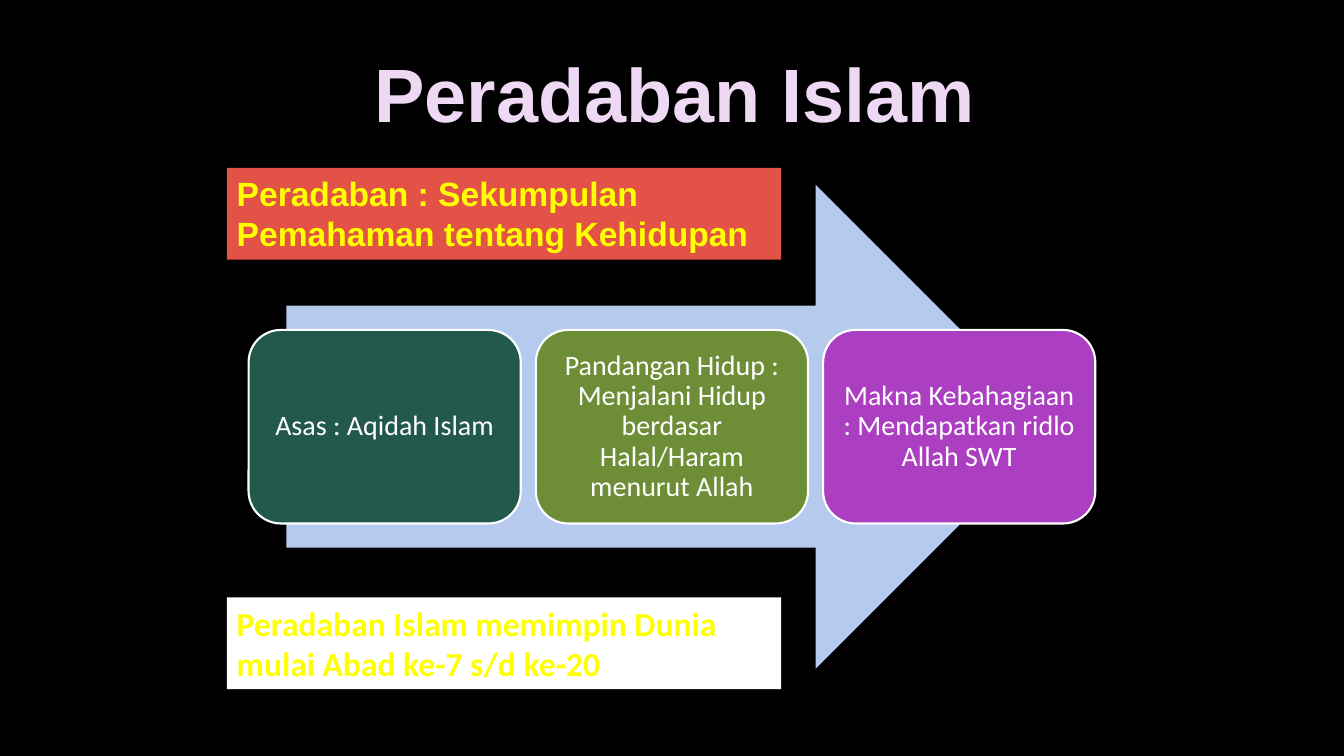
from dataclasses import dataclass

from pptx import Presentation
from pptx.dml.color import RGBColor
from pptx.enum.shapes import MSO_SHAPE
from pptx.enum.text import MSO_ANCHOR, PP_ALIGN
from pptx.util import Pt


@dataclass(frozen=True)
class Theme:
    background: str = "000000"
    title: str = "EED8F3"
    arrow: str = "B5CAED"
    light: str = "FFFFFF"
    accent: str = "FFFF00"
    red: str = "E25247"
    steps: tuple = ("23594C", "6D8E37", "AC3EC1")
    heading_font: str = "Arial"
    body_font: str = "Calibri"
    title_size: int = 54
    banner_size: int = 24
    step_size: int = 20


THEME = Theme()
STEPS = (
    "Asas : Aqidah Islam",
    "Pandangan Hidup : Menjalani Hidup berdasar Halal/Haram menurut Allah",
    "Makna Kebahagiaan : Mendapatkan ridlo Allah SWT",
)


def apply(obj, values):
    for name, value in values.items():
        setattr(obj, name, value)


def write(sp, text, color, font, frame, para):
    tf = sp.text_frame
    apply(tf, frame)
    p = tf.paragraphs[0]
    apply(p, para)
    r = p.add_run()
    r.text = text
    apply(r.font, font)
    r.font.color.rgb = RGBColor.from_string(color)


def add_block(s, kind, box, fill, line=None):
    sp = s.shapes.add_shape(kind, *(Pt(v) for v in box))
    sp.shadow.inherit = False
    sp.fill.solid()
    sp.fill.fore_color.rgb = RGBColor.from_string(fill)
    if line:
        sp.line.color.rgb = RGBColor.from_string(line)
        sp.line.width = Pt(1.5)
    else:
        sp.line.fill.background()
    return sp


def add_title(s, box, text):
    sp = s.shapes.title
    apply(sp, dict(zip(("left", "top", "width", "height"), map(Pt, box))))
    write(sp, text, THEME.title,
          {"name": THEME.heading_font, "size": Pt(THEME.title_size), "bold": True},
          {"word_wrap": False, "vertical_anchor": MSO_ANCHOR.TOP},
          {"alignment": PP_ALIGN.CENTER, "line_spacing": 1.0, "space_before": Pt(0)})


def add_process(s, box):
    left, top, width, height = box

    # Arrow behind the steps
    arrow_w = width * 0.85
    add_block(s, MSO_SHAPE.RIGHT_ARROW,
              (left + (width - arrow_w) / 2, top, arrow_w, height), THEME.arrow)

    # Equal steps, centred on the arrow
    step_w, step_h, gap = width * 0.3, height * 0.4, width / 60
    n = len(STEPS)
    first = left + (width - n * step_w - (n - 1) * gap) / 2
    margins = {f"margin_{side}": Pt(6) for side in ("left", "top", "right", "bottom")}
    for i, (text, fill) in enumerate(zip(STEPS, THEME.steps)):
        step = (first + i * (step_w + gap), top + (height - step_h) / 2, step_w, step_h)
        sp = add_block(s, MSO_SHAPE.ROUNDED_RECTANGLE, step, fill, THEME.light)
        write(sp, text, THEME.light,
              {"name": THEME.body_font, "size": Pt(THEME.step_size)},
              {"word_wrap": True, "vertical_anchor": MSO_ANCHOR.MIDDLE, **margins},
              {"alignment": PP_ALIGN.CENTER, "line_spacing": 0.9})


def add_banner(s, box, text, fill, font):
    sp = add_block(s, MSO_SHAPE.RECTANGLE, box, fill)
    write(sp, text, THEME.accent,
          {"name": font, "size": Pt(THEME.banner_size), "bold": True},
          {"word_wrap": True, "vertical_anchor": MSO_ANCHOR.TOP},
          {"alignment": PP_ALIGN.LEFT})


def main():
    prs = Presentation()
    prs.slide_width, prs.slide_height = Pt(960), Pt(540)
    s = prs.slides.add_slide(prs.slide_layouts[5])
    s.background.fill.solid()
    s.background.fill.fore_color.rgb = RGBColor.from_string(THEME.background)

    add_title(s, (258, 30, 448, 73), "Peradaban Islam")
    add_process(s, (156, 132, 648, 345.6))

    # Banners above and below the process
    add_banner(s, (162, 120, 396, 65.5),
               "Peradaban : Sekumpulan Pemahaman tentang Kehidupan",
               THEME.red, THEME.heading_font)
    add_banner(s, (162, 426.75, 396, 65.5),
               "Peradaban Islam memimpin Dunia mulai Abad ke-7 s/d ke-20",
               THEME.light, THEME.body_font)
    prs.save("out.pptx")


if __name__ == "__main__":
    main()
